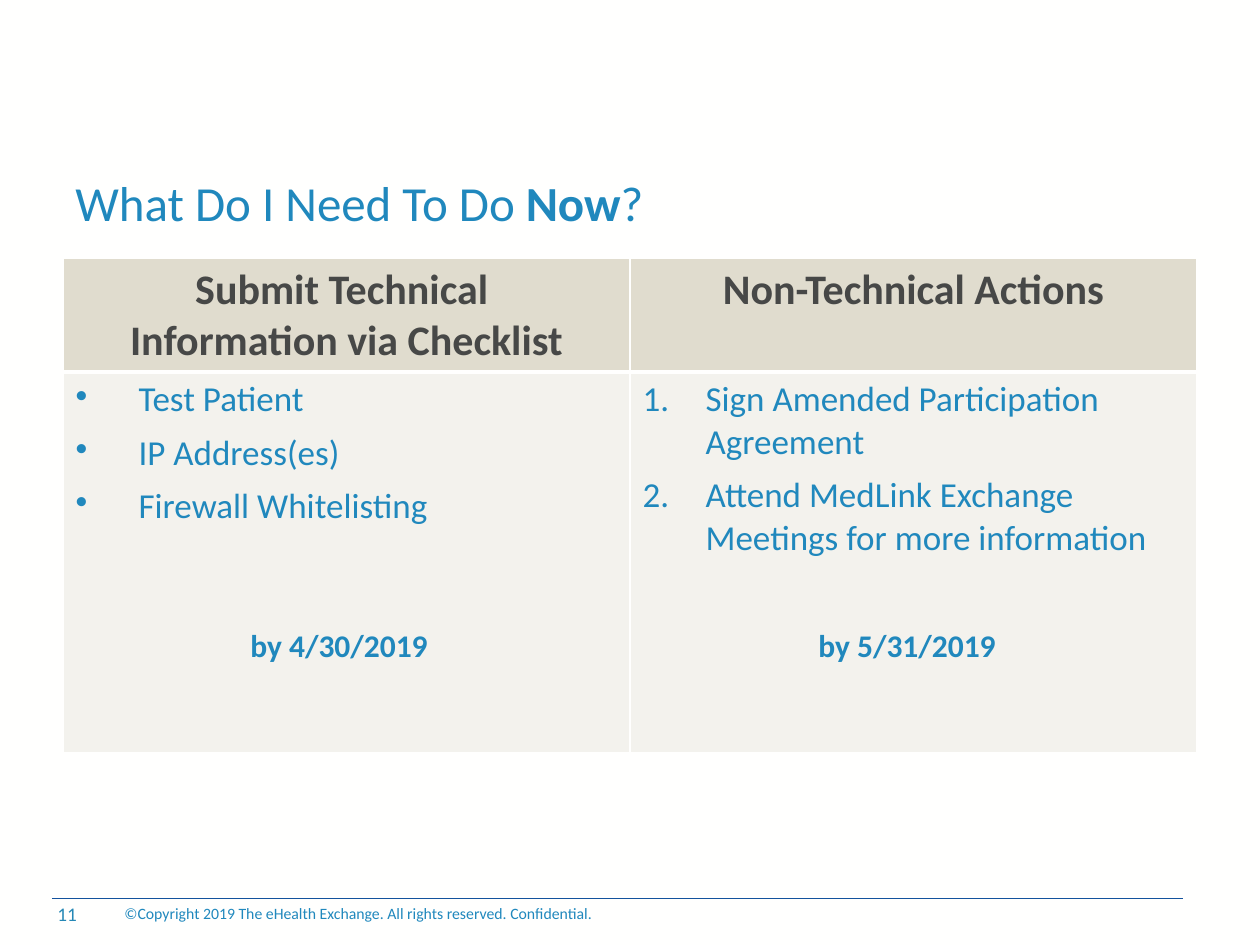
from typing import NamedTuple

from lxml.etree import SubElement as Sub
from pptx import Presentation
from pptx.dml.color import RGBColor as Rgb
from pptx.enum.shapes import MSO_CONNECTOR as Conn
from pptx.enum.text import MSO_ANCHOR as Anchor, PP_ALIGN as Align
from pptx.oxml.ns import qn
from pptx.util import Emu, Pt

SCALE = 914400 / 126
HEX = {
    "back": "FFFFFE", "blue": "2088BD", "page": "2588B6", "rule": "13529D",
    "dark": "474847", "head": "E0DCCE", "body": "F3F2ED",
}


class Label(NamedTuple):
    box: tuple[int, int, int, int]
    runs: list[tuple[str, bool]]
    size: int
    color: str = "blue"
    anchor: Anchor = Anchor.TOP
    tab: int = 0


class Column(NamedTuple):
    head: list[str]
    items: list[str]
    mark: tuple[str, str, str]  # bullet tag, attribute, value


LABELS = [
    Label((63, 101, 1134, 137),
          [("What Do I Need To Do ", False), ("Now", True), ("?", False)],
          28, anchor=Anchor.BOTTOM),
    Label((112, 888, 508, 50),
          [("©Copyright 2019 The eHealth Exchange. All rights reserved. Confidential.", False)],
          9, anchor=Anchor.MIDDLE),
    Label((45, 896, 294, 50), [("11", False)], 11, "page"),
]
DATES = Label((238, 620, 910, 50), [("by 4/30/2019\tby 5/31/2019", True)], 18, tab=568)
COLUMNS = [
    Column(["Submit Technical ", "Information via Checklist"],
           ["Test Patient", "IP Address(es)", "Firewall Whitelisting"],
           ("a:buChar", "char", "•")),
    Column(["Non-Technical Actions"],
           ["Sign Amended Participation Agreement",
            "Attend MedLink Exchange Meetings for more information"],
           ("a:buAutoNum", "type", "arabicPeriod")),
]


def px(n: int) -> Emu:
    return Emu(round(n * SCALE))


def rgb(name: str) -> Rgb:
    return Rgb.from_string(HEX[name])


def write(frame, paras, size=18, color="blue", align=Align.LEFT,
          after=0, mark=None, tab=0) -> None:
    """Fill a text frame; each paragraph is a list of (text, bold) runs."""
    frame.word_wrap = True
    for i, runs in enumerate(paras):
        para = frame.add_paragraph() if i else frame.paragraphs[0]
        props = para._p.get_or_add_pPr()
        if mark:
            tag, key, value = mark
            props.set("marL", str(px(63)))
            props.set("indent", str(px(-63)))
            Sub(props, qn(tag)).set(key, value)
        if tab:
            stops = Sub(props, qn("a:tabLst"))
            Sub(stops, qn("a:tab"), pos=str(px(tab)), algn="l")
        para.alignment = align
        para.space_after = Pt(after)
        for text, bold in runs:
            run = para.add_run()
            run.text = text
            font = run.font
            font.name, font.size, font.bold = "Calibri", Pt(size), bold
            font.color.rgb = rgb(color)


def draw_label(slide, label: Label) -> None:
    frame = slide.shapes.add_textbox(*map(px, label.box)).text_frame
    frame.vertical_anchor = label.anchor
    write(frame, [label.runs], size=label.size, color=label.color, tab=label.tab)


def style_cell(cell, fill: str, top: int, bottom: int) -> None:
    props = cell._tc.get_or_add_tcPr()
    for side, width in zip("LRTB", (1, 1, top, bottom)):
        edge = Sub(props, qn(f"a:ln{side}"), w=str(Pt(width)))
        Sub(Sub(edge, qn("a:solidFill")), qn("a:srgbClr"), val=HEX["back"])
    cell.fill.solid()
    cell.fill.fore_color.rgb = rgb(fill)


def draw_table(slide, cols: list[Column]) -> None:
    table = slide.shapes.add_table(2, len(cols), px(63), px(258), px(1134), px(495)).table
    table.first_row = table.horz_banding = False
    for row, high in zip(table.rows, (114, 381)):
        row.height = px(high)
    for i, col in enumerate(cols):
        table.columns[i].width = px(1134 // len(cols))
        head, body = table.cell(0, i), table.cell(1, i)
        style_cell(head, "head", top=1, bottom=3)
        style_cell(body, "body", top=3, bottom=1)
        write(head.text_frame, [[(t, True)] for t in col.head],
              size=24, color="dark", align=Align.CENTER)
        write(body.text_frame, [[(t, False)] for t in col.items],
              size=20, after=6, mark=col.mark)


def draw_rule(slide) -> None:
    rule = slide.shapes.add_connector(Conn.STRAIGHT, px(52), px(898), px(1183), px(898))
    rule.line.color.rgb = rgb("rule")
    rule.line.width = Pt(0.5)
    Sub(rule._element.spPr, qn("a:effectLst"))


def main() -> None:
    deck = Presentation()
    deck.slide_width, deck.slide_height = px(1260), px(945)
    slide = deck.slides.add_slide(deck.slide_layouts[6])
    slide.background.fill.solid()
    slide.background.fill.fore_color.rgb = rgb("back")

    # Footer rule, title and footer texts
    draw_rule(slide)
    for label in LABELS:
        draw_label(slide, label)

    # Actions, with the due dates on top
    draw_table(slide, COLUMNS)
    draw_label(slide, DATES)

    deck.save("out.pptx")


if __name__ == "__main__":
    main()
